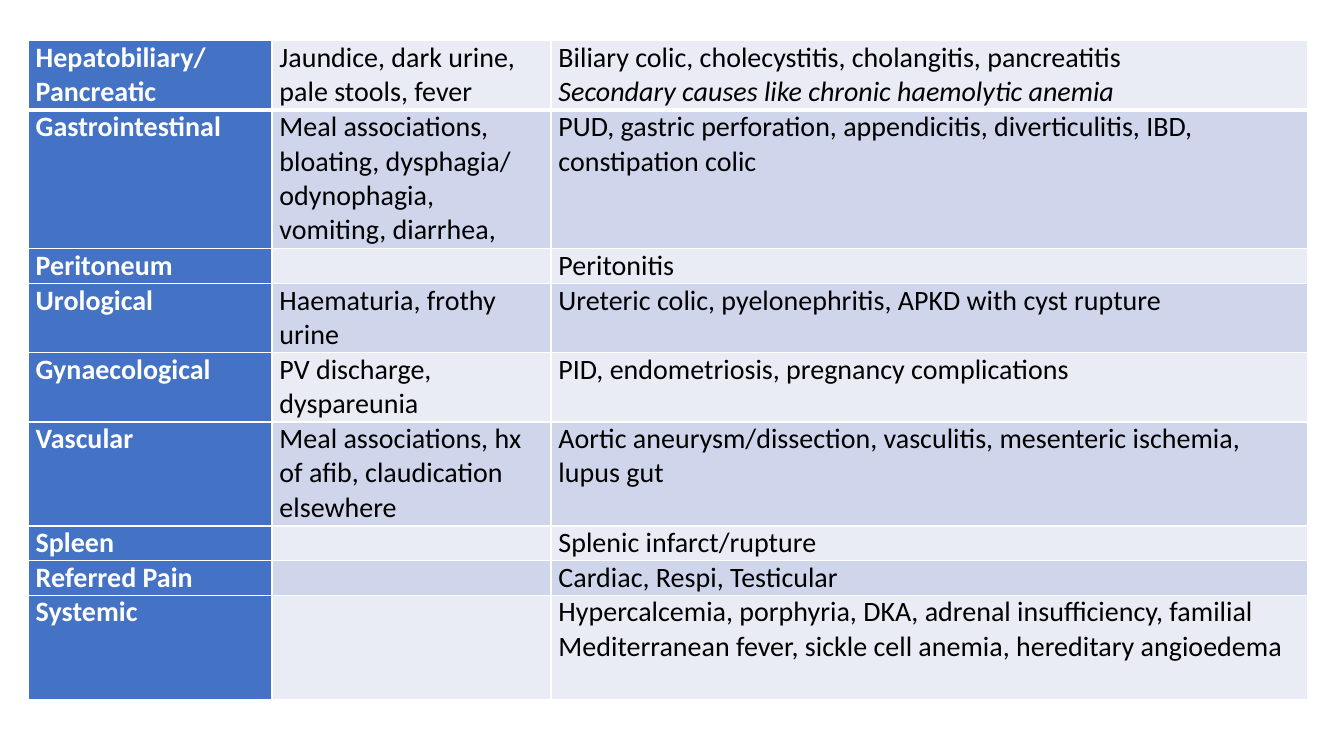
from lxml import etree
from pptx import Presentation
from pptx.dml.color import RGBColor
from pptx.oxml import ns
from pptx.util import Cm, Pt

FONT = "Calibri"
WHITE = RGBColor(0xFF, 0xFF, 0xFF)
BLACK = RGBColor(0x00, 0x00, 0x00)
SYSTEM_BLUE = RGBColor(0x44, 0x72, 0xC4)
BANDS = (RGBColor(0xE9, 0xEB, 0xF5), RGBColor(0xCF, 0xD5, 0xEA))

COLUMN_SHARES = (2.42, 2.77, 7.51)

# System, associated symptoms, causes (one entry per paragraph), height in text lines
SYSTEMS = [
    ("Hepatobiliary/ Pancreatic", "Jaundice, dark urine, pale stools, fever",
     ["Biliary colic, cholecystitis, cholangitis, pancreatitis",
      "Secondary causes like chronic haemolytic anemia"], 2),
    ("Gastrointestinal",
     "Meal associations, bloating, dysphagia/ odynophagia, vomiting, diarrhea,",
     ["PUD, gastric perforation, appendicitis, diverticulitis, IBD, constipation colic"], 4),
    ("Peritoneum", "", ["Peritonitis"], 1),
    ("Urological", "Haematuria, frothy urine",
     ["Ureteric colic, pyelonephritis, APKD with cyst rupture"], 2),
    ("Gynaecological", "PV discharge, dyspareunia",
     ["PID, endometriosis, pregnancy complications"], 2),
    ("Vascular", "Meal associations, hx of afib, claudication elsewhere",
     ["Aortic aneurysm/dissection, vasculitis, mesenteric ischemia, lupus gut"], 3),
    ("Spleen", "", ["Splenic infarct/rupture"], 1),
    ("Referred Pain", "", ["Cardiac, Respi, Testicular"], 1),
    ("Systemic", "",
     ["Hypercalcemia, porphyria, DKA, adrenal insufficiency, familial Mediterranean "
      "fever, sickle cell anemia, hereditary angioedema"], 3),
]


def set_borders(cell, bottom_width):
    """Draw white cell borders, 1 pt except for the given bottom width."""
    properties = cell._tc.get_or_add_tcPr()
    widths = {"lnL": 1, "lnR": 1, "lnT": 1, "lnB": bottom_width}
    for position, (side, width) in enumerate(widths.items()):
        line = etree.Element(ns.qn(f"a:{side}"), w=str(Pt(width)))
        fill = etree.SubElement(line, ns.qn("a:solidFill"))
        etree.SubElement(fill, ns.qn("a:srgbClr"), val=str(WHITE))
        properties.insert(position, line)


def fill_cell(cell, paragraphs, fill_color, text_color, bold):
    cell.fill.solid()
    cell.fill.fore_color.rgb = fill_color
    cell.margin_left = cell.margin_right = Cm(0.19)
    cell.margin_top = cell.margin_bottom = 0
    cell.text = "\n".join(paragraphs)
    for index, paragraph in enumerate(cell.text_frame.paragraphs):
        font = paragraph.font
        font.name = FONT
        font.size = Pt(20)
        font.bold = bold
        font.italic = index > 0
        font.color.rgb = text_color


def add_systems_table(slide, left, top, width, height):
    table = slide.shapes.add_table(
        len(SYSTEMS), len(COLUMN_SHARES), left, top, width, height).table
    table.first_row = False
    table.first_col = True
    for column, share in zip(table.columns, COLUMN_SHARES):
        column.width = int(width * share / sum(COLUMN_SHARES))

    line_count = sum(lines for *_, lines in SYSTEMS)
    for index, (system, symptoms, causes, lines) in enumerate(SYSTEMS):
        table.rows[index].height = int(height * lines / line_count)
        band = BANDS[index % 2]
        fill_cell(table.cell(index, 0), [system], SYSTEM_BLUE, WHITE, True)
        fill_cell(table.cell(index, 1), [symptoms], band, BLACK, False)
        fill_cell(table.cell(index, 2), causes, band, BLACK, False)
        for column in range(len(COLUMN_SHARES)):
            set_borders(table.cell(index, column), 3 if index == 0 else 1)


def main():
    presentation = Presentation()
    presentation.slide_width = Cm(33.87)
    presentation.slide_height = Cm(19.05)
    slide = presentation.slides.add_slide(presentation.slide_layouts[6])
    add_systems_table(slide, Cm(0.71), Cm(1.03), Cm(32.24), Cm(16.59))
    presentation.save("out.pptx")


if __name__ == "__main__":
    main()
